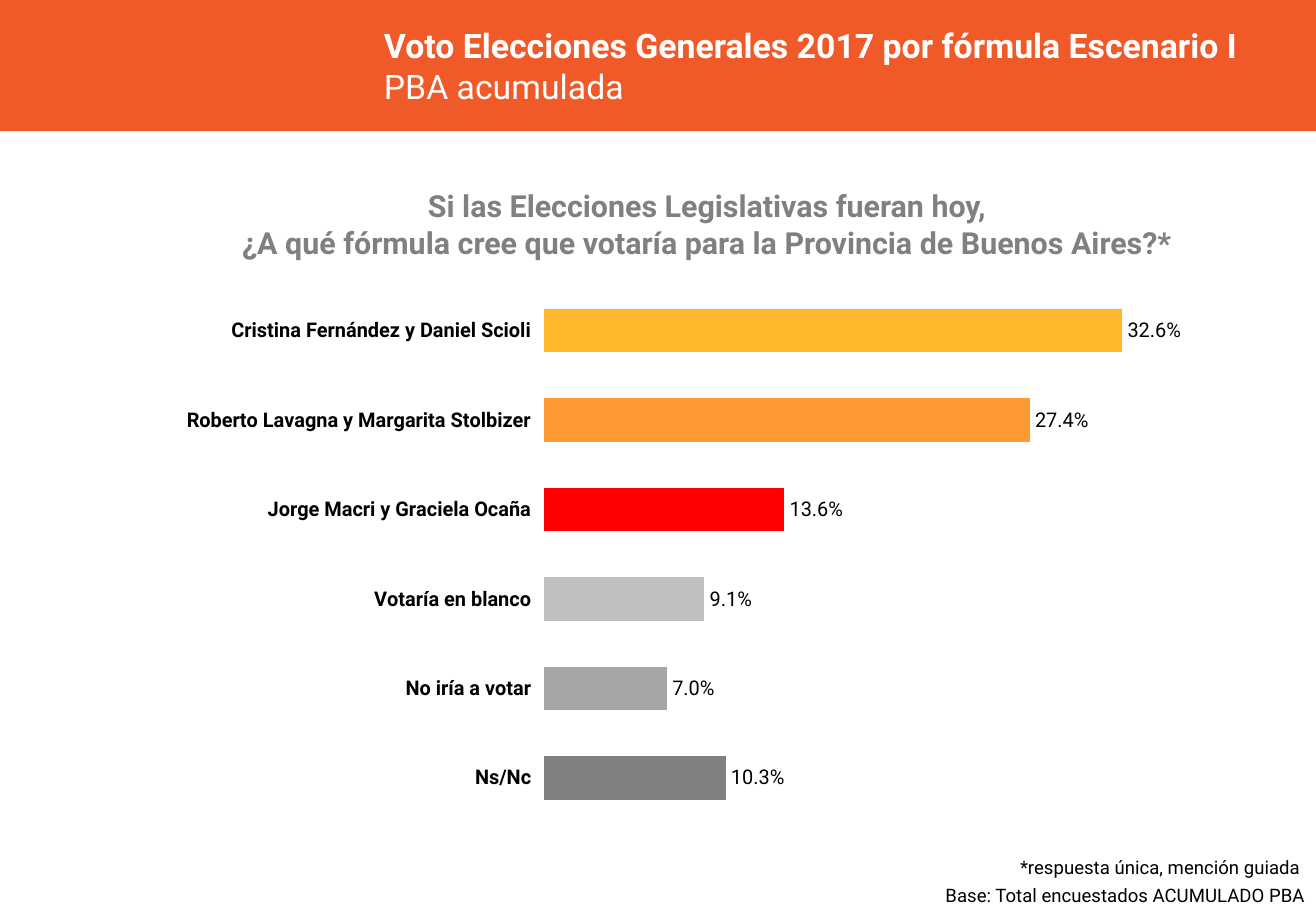
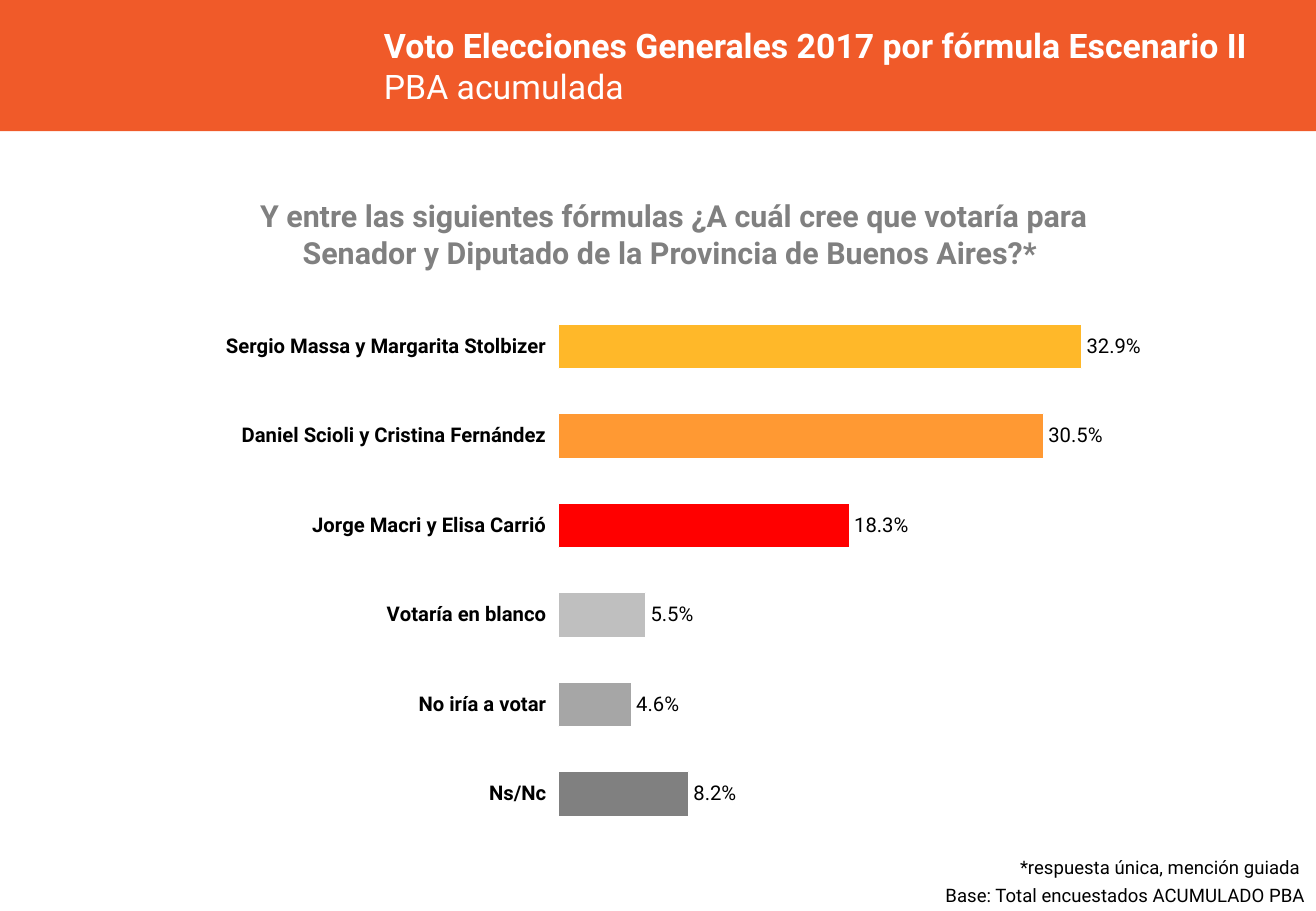
from lxml.etree import QName, SubElement
from pptx import Presentation
from pptx.chart.data import CategoryChartData
from pptx.dml.color import RGBColor
from pptx.enum.chart import XL_CHART_TYPE, XL_LABEL_POSITION
from pptx.enum.shapes import MSO_SHAPE
from pptx.enum.text import MSO_ANCHOR, PP_ALIGN
from pptx.util import Inches, Pt

FONT = "Roboto"
ORANGE = RGBColor(0xF0, 0x5A, 0x29)
WHITE = RGBColor(0xFF, 0xFF, 0xFF)
BLACK = RGBColor(0, 0, 0)
GREY = RGBColor(0x80, 0x80, 0x80)
BAR_COLORS = [
    RGBColor(0xFF, 0xB8, 0x29), RGBColor(0xFF, 0x99, 0x33), RGBColor(0xFF, 0, 0),
    RGBColor(0xBF, 0xBF, 0xBF), RGBColor(0xA6, 0xA6, 0xA6), GREY,
]
OTHER_ANSWERS = ["Votaría en blanco", "No iría a votar", "Ns/Nc"]
SLIDE_WIDTH, SLIDE_HEIGHT = 10.83, 7.5

# Boxes are left, top, width, height in inches; plots are fractions of the chart
SCENARIOS = [
    {
        "number": "I",
        "question": ["Si las Elecciones Legislativas fueran hoy, ",
                     "¿A qué fórmula cree que votaría para la Provincia de Buenos Aires?* "],
        "question_box": (1.67, 1.56, 8.36, 0.57),
        "tickets": ["Cristina Fernández y Daniel Scioli",
                    "Roberto Lavagna y Margarita Stolbizer",
                    "Jorge Macri y Graciela Ocaña"],
        "votes": [0.326, 0.274, 0.136, 0.091, 0.07, 0.103],
        "chart_box": (1.33, 2.34, 8.39, 4.59),
        "plot": (0.38, 0.003, 0.62, 0.963),
    },
    {
        "number": "II",
        "question": ["Y entre las siguientes fórmulas ¿A cuál cree que votaría para "
                     "Senador y Diputado de la Provincia de Buenos Aires?* "],
        "question_box": (1.83, 1.64, 7.43, 0.57),
        "tickets": ["Sergio Massa y Margarita Stolbizer",
                    "Daniel Scioli y Cristina Fernández",
                    "Jorge Macri y Elisa Carrió"],
        "votes": [0.329, 0.305, 0.183, 0.055, 0.046, 0.082],
        "chart_box": (1.36, 2.47, 8.23, 4.59),
        "plot": (0.393, 0.003, 0.557, 0.963),
    },
]
FOOTNOTES = [
    ("*respuesta única, mención guiada", (8.25, 7, 2.55, 0.29)),
    ("Base: Total encuestados ACUMULADO PBA", (7.68, 7.23, 3.16, 0.29)),
]


def inches(box):
    return [Inches(length) for length in box]


def set_font(font, size, color, bold=False):
    font.name, font.size, font.bold = FONT, Pt(size), bold
    font.color.rgb = color


def add_run(paragraph, text, size, color, bold=False):
    run = paragraph.add_run()
    run.text = text
    set_font(run.font, size, color, bold)


def add_layout_band(layout, slide):
    """Draw the header band and move it to the layout, behind every title."""
    band = slide.shapes.add_shape(
        MSO_SHAPE.RECTANGLE, *inches((0, 0, SLIDE_WIDTH, 1.08)))
    band.shadow.inherit = False
    band.fill.solid()
    band.fill.fore_color.rgb = ORANGE
    band.line.fill.background()
    layout.shapes.element.insert(2, band.element)


def fill_title(slide, number, box):
    title = slide.shapes.title
    title.left, title.top, title.width, title.height = inches(box)
    frame = title.text_frame
    frame.vertical_anchor = MSO_ANCHOR.MIDDLE
    frame.margin_bottom = Inches(0.1)
    heading = frame.paragraphs[0]
    heading.alignment = PP_ALIGN.LEFT
    add_run(heading, f"Voto Elecciones Generales 2017 por fórmula Escenario {number}",
            20, WHITE, True)
    heading.add_line_break()
    add_run(heading, "PBA acumulada", 20, WHITE)


def add_text(slide, lines, box, alignment, size, color, bold=False, wrap=True):
    frame = slide.shapes.add_textbox(*inches(box)).text_frame
    frame.word_wrap = wrap
    frame.vertical_anchor = MSO_ANCHOR.MIDDLE if wrap else MSO_ANCHOR.TOP
    for index, line in enumerate(lines):
        paragraph = frame.add_paragraph() if index else frame.paragraphs[0]
        paragraph.alignment = alignment
        add_run(paragraph, line, size, color, bold)


def set_plot_area(chart, plot):
    """Fix the inner plot area."""
    plot_area = chart.element.chart.plotArea
    namespace = QName(plot_area).namespace

    def add(parent, tag, value=None):
        child = SubElement(parent, f"{{{namespace}}}{tag}")
        if value is not None:
            child.set("val", str(value))
        return child

    for old_layout in plot_area.findall(f"{{{namespace}}}layout"):
        plot_area.remove(old_layout)
    layout = add(plot_area, "layout")
    plot_area.insert(0, layout)
    manual = add(layout, "manualLayout")
    add(manual, "layoutTarget", "inner")
    for tag in ("xMode", "yMode"):
        add(manual, tag, "edge")
    for tag, value in zip("xywh", plot):
        add(manual, tag, value)


def add_vote_chart(slide, categories, votes, box, plot_position):
    data = CategoryChartData(number_format="0.0%")
    data.categories = categories
    data.add_series("Series 1", votes)
    chart = slide.shapes.add_chart(
        XL_CHART_TYPE.BAR_CLUSTERED, *inches(box), data).chart
    chart.has_legend = chart.has_title = False
    set_font(chart.font, 18, BLACK)
    set_plot_area(chart, plot_position)

    # Axes
    answers = chart.category_axis
    answers.reverse_order = True
    answers.format.line.fill.background()
    set_font(answers.tick_labels.font, 12, BLACK, True)
    scale = chart.value_axis
    scale.visible = scale.has_major_gridlines = False
    scale.minimum_scale, scale.maximum_scale = 0, 0.35

    # Bars and their values
    plot = chart.plots[0]
    plot.gap_width = 100
    plot.vary_by_categories = False
    series = plot.series[0]
    series.format.fill.solid()
    series.format.fill.fore_color.rgb = ORANGE
    for index, color in enumerate(BAR_COLORS):
        bar = series.points[index].format
        bar.fill.solid()
        bar.fill.fore_color.rgb = color
        bar.line.color.rgb = WHITE
        bar.line.width = Pt(0.75)
    labels = series.data_labels
    labels.show_value = True
    labels.position = XL_LABEL_POSITION.OUTSIDE_END
    labels.number_format, labels.number_format_is_linked = "0.0%", False
    set_font(labels.font, 12, BLACK)


def build_scenario(slide, scenario):
    fill_title(slide, scenario["number"], (3.06, 0.3, 7.77, 0.53))
    add_text(slide, scenario["question"], scenario["question_box"],
             PP_ALIGN.CENTER, 18, GREY, bold=True)
    add_vote_chart(slide, scenario["tickets"] + OTHER_ANSWERS, scenario["votes"],
                   scenario["chart_box"], scenario["plot"])
    for note, box in FOOTNOTES:
        add_text(slide, [note], box, PP_ALIGN.RIGHT, 11, BLACK, wrap=False)


def main():
    deck = Presentation()
    deck.slide_width, deck.slide_height = inches((SLIDE_WIDTH, SLIDE_HEIGHT))
    title_only = deck.slide_layouts[5]
    for index, scenario in enumerate(SCENARIOS):
        slide = deck.slides.add_slide(title_only)
        if index == 0:
            add_layout_band(title_only, slide)
        build_scenario(slide, scenario)
    deck.save("out.pptx")


if __name__ == "__main__":
    main()
